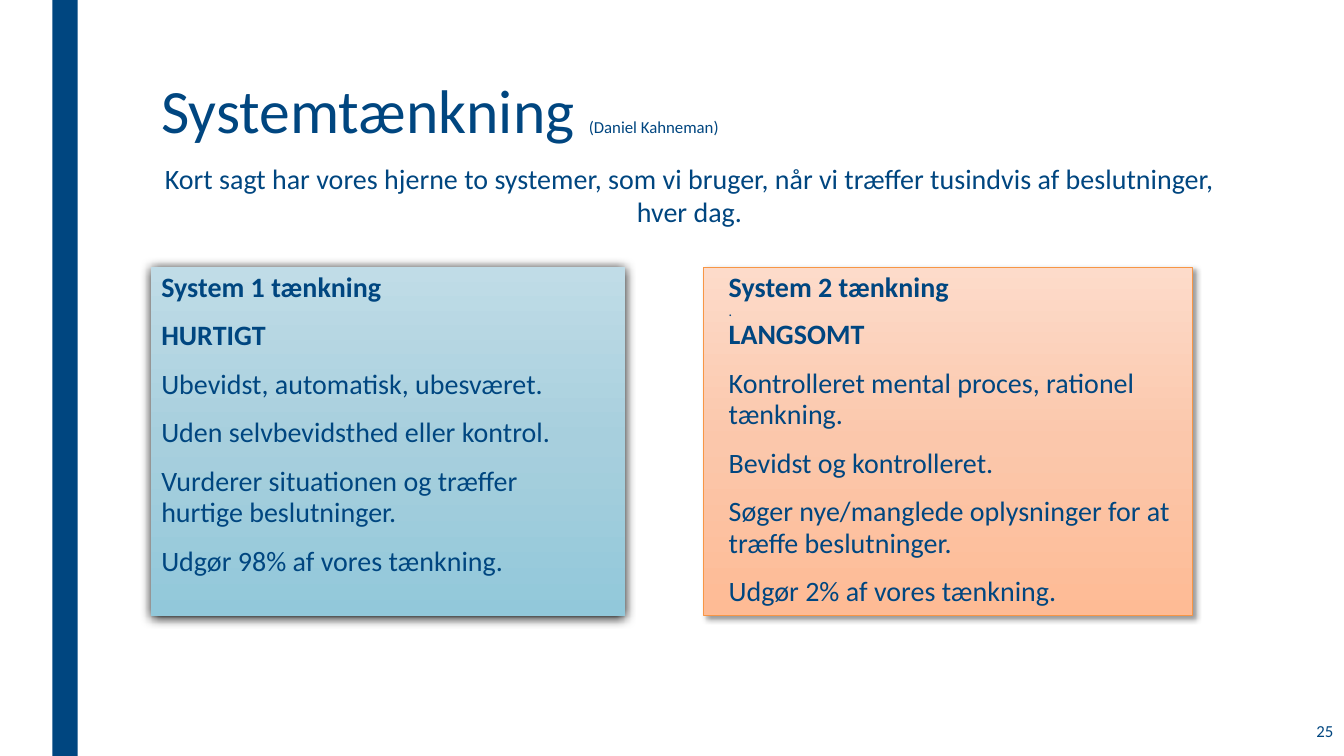
from copy import deepcopy
from dataclasses import dataclass
from typing import Optional

from lxml import etree
from pptx import Presentation
from pptx.dml.color import RGBColor
from pptx.enum import shapes, text
from pptx.oxml.ns import qn
from pptx.util import Cm, Pt

NAVY = RGBColor(0x00, 0x46, 0x80)
ORANGE = RGBColor(0xF7, 0x96, 0x46)
BLUES = (RGBColor(0xC0, 0xDC, 0xE7), RGBColor(0xA7, 0xCF, 0xDD), RGBColor(0x92, 0xC8, 0xDA))
PEACHES = (RGBColor(0xFD, 0xDB, 0xCA), RGBColor(0xFB, 0xC7, 0xAB), RGBColor(0xFE, 0xBB, 0x95))
FONT = "Calibri"
LEFT = 3.81
PANEL_TOP = 6.73
PANEL_HEIGHT = 8.79


@dataclass(frozen=True)
class Line:
    words: str
    size: int = 20
    bold: bool = False


@dataclass(frozen=True)
class Shadow:
    opacity: int
    blur: float
    distance: float
    angle: int


@dataclass(frozen=True)
class Panel:
    left: float
    width: float
    colors: tuple[RGBColor, ...]
    border: Optional[RGBColor]
    shadow: Shadow
    text_left: float
    text_width: float
    text_height: float
    paragraphs: tuple[tuple[Line, ...], ...]


PANELS = (
    Panel(LEFT, 11.94, BLUES, None, Shadow(100, 8.5, 1, 90), LEFT, 10.72, 8.41, (
        (Line("System 1 tænkning", bold=True),),
        (Line("HURTIGT", bold=True),),
        (Line("Ubevidst, automatisk, ubesværet."),),
        (Line("Uden selvbevidsthed eller kontrol."),),
        (Line("Vurderer situationen og træffer hurtige beslutninger."),),
        (Line("Udgør 98% af vores tænkning."),),
    )),
    Panel(17.73, 12.32, PEACHES, ORANGE, Shadow(40, 4, 3, 45), 18.11, 12.34, PANEL_HEIGHT, (
        (Line("System 2 tænkning", bold=True), Line(".", size=10), Line("LANGSOMT", bold=True)),
        (Line("Kontrolleret mental proces, rationel tænkning."),),
        (Line("Bevidst og kontrolleret."),),
        (Line("Søger nye/manglede oplysninger for at træffe beslutninger."),),
        (Line("Udgør 2% af vores tænkning."),),
    )),
)


def set_font(para, size: int, bold: bool = False) -> None:
    para.font.name = FONT
    para.font.size = Pt(size)
    para.font.bold = bold
    para.font.color.rgb = NAVY


def place(shape, left: float, top: float, width: float, height: float) -> None:
    shape.left, shape.top, shape.width, shape.height = map(Cm, (left, top, width, height))


def add_rectangle(page, left: float, top: float, width: float, height: float):
    """Add a rectangle without line or shadow behind everything else."""
    box = page.shapes.add_shape(shapes.MSO_SHAPE.RECTANGLE, *map(Cm, (left, top, width, height)))
    box.shadow.inherit = False
    box.line.fill.background()
    page.shapes._spTree.insert(2, box._element)
    return box


def fill_gradient(box, colors: tuple[RGBColor, ...]) -> None:
    """Spread the colours evenly from top to bottom."""
    box.fill.gradient()
    box.fill.gradient_angle = 270
    stops = box._element.spPr.find(".//" + qn("a:gsLst"))
    while len(stops) < len(colors):
        stops.append(deepcopy(stops[0]))
    for index, (stop, color) in enumerate(zip(box.fill.gradient_stops, colors)):
        stop.position = index / (len(colors) - 1)
        stop.color.rgb = color


def add_shadow(box, shadow: Shadow) -> None:
    effects = box._element.spPr.find(qn("a:effectLst"))
    outer = etree.SubElement(
        effects, qn("a:outerShdw"), blurRad=str(Pt(shadow.blur)), dist=str(Pt(shadow.distance)),
        dir=str(shadow.angle * 60000), rotWithShape="0")
    color = etree.SubElement(outer, qn("a:srgbClr"), val="000000")
    etree.SubElement(color, qn("a:alpha"), val=str(shadow.opacity * 1000))


def write_paragraph(para, lines: tuple[Line, ...], first: bool) -> None:
    props = para._p.get_or_add_pPr()
    props.set("marL", "0")
    props.set("indent", "0")
    etree.SubElement(props, qn("a:buNone"))
    para.line_spacing = 0.94
    para.space_before = Pt(0 if first else 10)
    para.space_after = Pt(2)
    set_font(para, lines[0].size, lines[0].bold)
    for index, line in enumerate(lines):
        if index:
            line_break = para._p.add_br()
            etree.SubElement(line_break, qn("a:rPr"), sz=str(lines[index - 1].size * 100))
        span = para.add_run()
        span.text = line.words
        if line.size != lines[0].size:
            span.font.size = Pt(line.size)
        if line.bold != lines[0].bold:
            span.font.bold = line.bold


def draw_panel(page, panel: Panel, body) -> None:
    box = add_rectangle(page, panel.left, PANEL_TOP, panel.width, PANEL_HEIGHT)
    fill_gradient(box, panel.colors)
    add_shadow(box, panel.shadow)
    if panel.border is not None:
        box.line.color.rgb = panel.border
        box.line.width = Pt(0.5)
    place(body, panel.text_left, PANEL_TOP, panel.text_width, panel.text_height)
    frame = body.text_frame
    frame.auto_size = text.MSO_AUTO_SIZE.NONE
    frame.vertical_anchor = text.MSO_ANCHOR.TOP
    for index, lines in enumerate(panel.paragraphs):
        para = frame.add_paragraph() if index else frame.paragraphs[0]
        write_paragraph(para, lines, first=index == 0)


def write_title(title) -> None:
    place(title, LEFT, 1.9, 26.67, 4.11)
    frame = title.text_frame
    frame.auto_size = text.MSO_AUTO_SIZE.NONE
    frame.vertical_anchor = text.MSO_ANCHOR.TOP
    para = frame.paragraphs[0]
    para.alignment = text.PP_ALIGN.LEFT
    para.line_spacing = 0.89
    set_font(para, 44)
    para.add_run().text = "Systemtænkning "
    author = para.add_run()
    author.text = "(Daniel Kahneman)"
    author.font.size = Pt(12)


def add_label(page, words: str, left: float, top: float, width: float, height: float,
              size: int, alignment: text.PP_ALIGN, anchor: text.MSO_ANCHOR) -> None:
    box = page.shapes.add_textbox(*map(Cm, (left, top, width, height)))
    frame = box.text_frame
    frame.word_wrap = True
    frame.vertical_anchor = anchor
    para = frame.paragraphs[0]
    para.alignment = alignment
    set_font(para, size)
    para.add_run().text = words


def main() -> None:
    deck = Presentation()
    deck.slide_width, deck.slide_height = Cm(33.87), Cm(19.05)
    page = deck.slides.add_slide(deck.slide_layouts.get_by_name("Two Content"))
    title, *bodies = page.placeholders
    write_title(title)
    for panel, body in zip(PANELS, bodies):
        draw_panel(page, panel, body)
    bar = add_rectangle(page, 1.32, 0, 0.64, 19.05)
    bar.fill.solid()
    bar.fill.fore_color.rgb = NAVY
    add_label(page, "25", 29.41, 17.86, 4.44, 1.12, 12,
              text.PP_ALIGN.RIGHT, text.MSO_ANCHOR.MIDDLE)
    add_label(page, "Kort sagt har vores hjerne to systemer, som vi bruger, når vi træffer "
              "tusindvis af beslutninger, hver dag.", LEFT, 3.94, 27.13, 1.96, 20,
              text.PP_ALIGN.CENTER, text.MSO_ANCHOR.TOP)
    deck.save("out.pptx")


if __name__ == "__main__":
    main()
